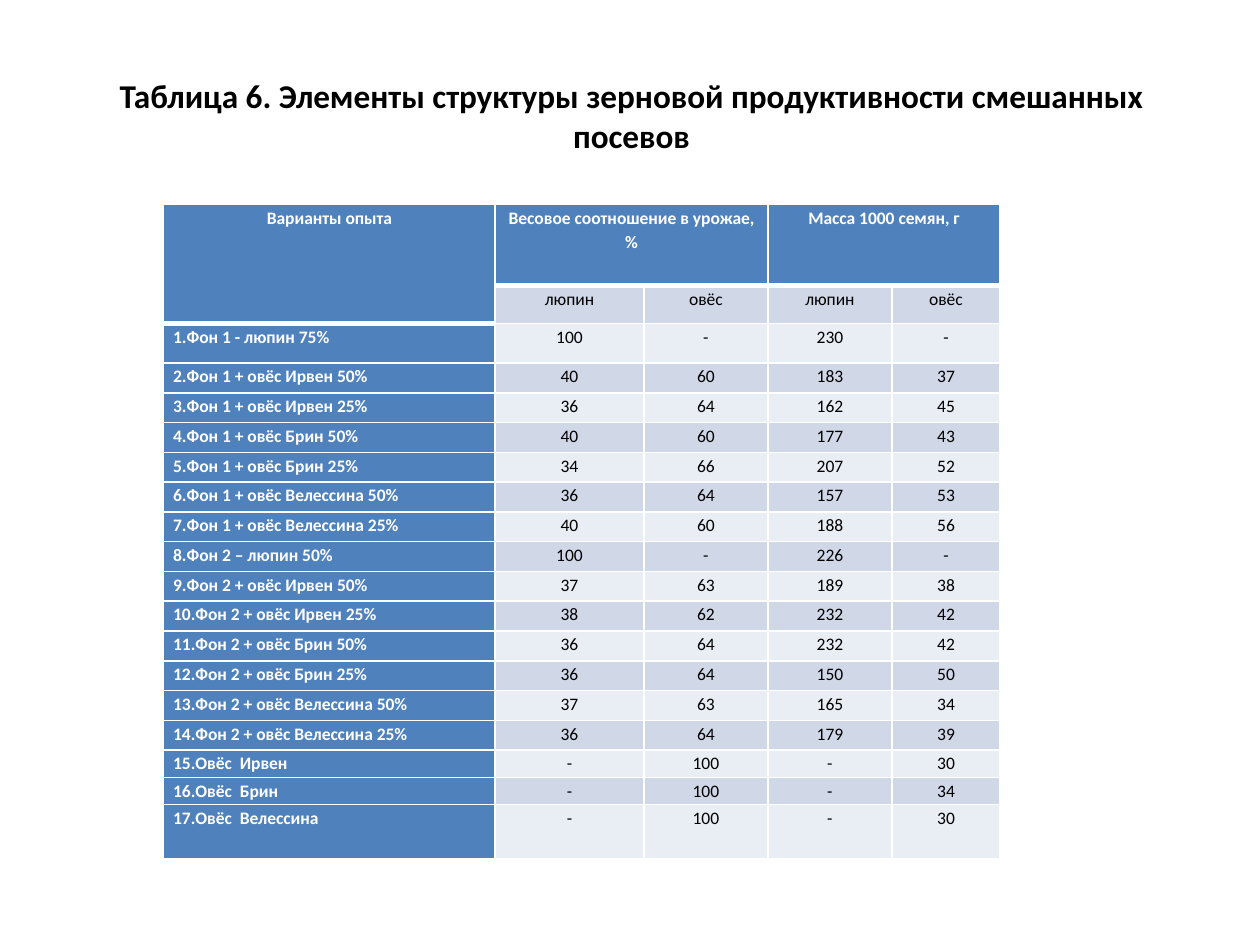
"""Build a slide with a table of grain yield structure in mixed crops."""
from dataclasses import dataclass

from lxml.etree import SubElement
from pptx import Presentation
from pptx.dml.color import RGBColor
from pptx.enum.text import MSO_ANCHOR, PP_ALIGN
from pptx.oxml.ns import qn
from pptx.util import Cm, Pt

FONT = "Calibri"
BLACK = RGBColor(0x00, 0x00, 0x00)
WHITE = RGBColor(0xFF, 0xFF, 0xFF)
BLUE = RGBColor(0x4F, 0x81, 0xBD)
BAND_DARK = RGBColor(0xD0, 0xD8, 0xE8)
BAND_LIGHT = RGBColor(0xE9, 0xED, 0xF4)

TITLE = "Таблица 6. Элементы структуры зерновой продуктивности смешанных посевов"
COLUMN_WIDTHS = (6.68, 3, 2.5, 2.5, 2.18)
ROW_HEIGHTS = (1.64, 0.76, 0.8, *[0.6] * 13, 0.55, 0.55, 1.09)


@dataclass(frozen=True)
class Variant:
    label: str
    values: str
    align: PP_ALIGN = PP_ALIGN.JUSTIFY


@dataclass(frozen=True)
class CellStyle:
    fill: RGBColor
    color: RGBColor
    bold: bool
    align: PP_ALIGN = PP_ALIGN.CENTER
    bottom: float = 1


HEADER = CellStyle(BLUE, WHITE, True, bottom=3)
VARIANTS = (
    Variant("1.Фон 1 - люпин 75%", "100 - 230 -", PP_ALIGN.LEFT),
    Variant("2.Фон 1 + овёс Ирвен 50%", "40 60 183 37"),
    Variant("3.Фон 1 + овёс Ирвен 25%", "36 64 162 45", PP_ALIGN.LEFT),
    Variant("4.Фон 1 + овёс Брин 50%", "40 60 177 43", PP_ALIGN.LEFT),
    Variant("5.Фон 1 + овёс Брин 25%", "34 66 207 52", PP_ALIGN.LEFT),
    Variant("6.Фон 1 + овёс Велессина 50%", "36 64 157 53", PP_ALIGN.LEFT),
    Variant("7.Фон 1 + овёс Велессина 25%", "40 60 188 56"),
    Variant("8.Фон 2 – люпин 50%", "100 - 226 -"),
    Variant("9.Фон 2 + овёс Ирвен 50%", "37 63 189 38"),
    Variant("10.Фон 2 + овёс Ирвен 25%", "38 62 232 42"),
    Variant("11.Фон 2 + овёс Брин 50%", "36 64 232 42"),
    Variant("12.Фон 2 + овёс Брин 25%", "36 64 150 50"),
    Variant("13.Фон 2 + овёс Велессина 50%", "37 63 165 34"),
    Variant("14.Фон 2 + овёс Велессина 25%", "36 64 179 39"),
    Variant("15.Овёс  Ирвен", "- 100 - 30"),
    Variant("16.Овёс  Брин", "- 100 - 34"),
    Variant("17.Овёс  Велессина", "- 100 - 30"),
)


def add_span(para, text: str, size: float, color: RGBColor, bold: bool) -> None:
    span = para.add_run()
    span.text = text
    span.font.name = FONT
    span.font.size = Pt(size)
    span.font.bold = bold
    span.font.color.rgb = color


def add_title(page) -> None:
    box = page.shapes.add_textbox(Cm(1.3), Cm(0.74), Cm(22.86), Cm(3.18))
    frame = box.text_frame
    frame.word_wrap = True
    frame.vertical_anchor = MSO_ANCHOR.MIDDLE
    para = frame.paragraphs[0]
    para.alignment = PP_ALIGN.CENTER
    add_span(para, TITLE, 19, BLACK, True)


def add_border(cell, side: str, width: float) -> None:
    properties = cell._tc.get_or_add_tcPr()
    line = SubElement(properties, qn(f"a:ln{side}"), w=str(Pt(width)))
    fill = SubElement(line, qn("a:solidFill"))
    SubElement(fill, qn("a:srgbClr"), val=str(WHITE))


def style_cell(cell, text: str, style: CellStyle, top: float) -> None:
    for side, width in (("L", 1), ("R", 1), ("T", top), ("B", style.bottom)):
        add_border(cell, side, width)
    cell.fill.solid()
    cell.fill.fore_color.rgb = style.fill
    cell.margin_left = cell.margin_right = Cm(0.19)
    cell.margin_top = cell.margin_bottom = Cm(0)
    para = cell.text_frame.paragraphs[0]
    para.alignment = style.align
    para.line_spacing = 1.15
    if text:
        add_span(para, text, 10, style.color, style.bold)


def add_yield_table(page) -> None:
    frame = page.shapes.add_table(
        len(ROW_HEIGHTS), len(COLUMN_WIDTHS), Cm(3.3), Cm(4.12),
        Cm(sum(COLUMN_WIDTHS)), Cm(sum(ROW_HEIGHTS)),
    )
    table = frame.table
    for column, width in zip(table.columns, COLUMN_WIDTHS):
        column.width = Cm(width)
    for row, height in zip(table.rows, ROW_HEIGHTS):
        row.height = Cm(height)

    groups = ("Варианты опыта", "Весовое соотношение в урожае,%", "", "Масса 1000 семян, г", "")
    for column, text in enumerate(groups):
        style_cell(table.cell(0, column), text, HEADER, 1)
    style_cell(table.cell(1, 0), "", HEADER, 1)
    crop_style = CellStyle(BAND_DARK, BLACK, False)
    for column, crop in enumerate(("люпин", "овёс") * 2, start=1):
        style_cell(table.cell(1, column), crop, crop_style, HEADER.bottom)

    for row, variant in enumerate(VARIANTS, start=2):
        label_style = CellStyle(BLUE, WHITE, True, variant.align)
        label_top = HEADER.bottom if row == 2 else 1
        style_cell(table.cell(row, 0), variant.label, label_style, label_top)
        value_style = CellStyle(BAND_DARK if row % 2 else BAND_LIGHT, BLACK, False)
        for column, value in enumerate(variant.values.split(), start=1):
            style_cell(table.cell(row, column), value, value_style, 1)

    table.cell(0, 0).merge(table.cell(1, 0))
    table.cell(0, 1).merge(table.cell(0, 2))
    table.cell(0, 3).merge(table.cell(0, 4))


def main() -> None:
    deck = Presentation()
    deck.slide_width, deck.slide_height = Cm(25.4), Cm(19.05)
    page = deck.slides.add_slide(deck.slide_layouts[6])
    add_title(page)
    add_yield_table(page)
    deck.save("out.pptx")


if __name__ == "__main__":
    main()
